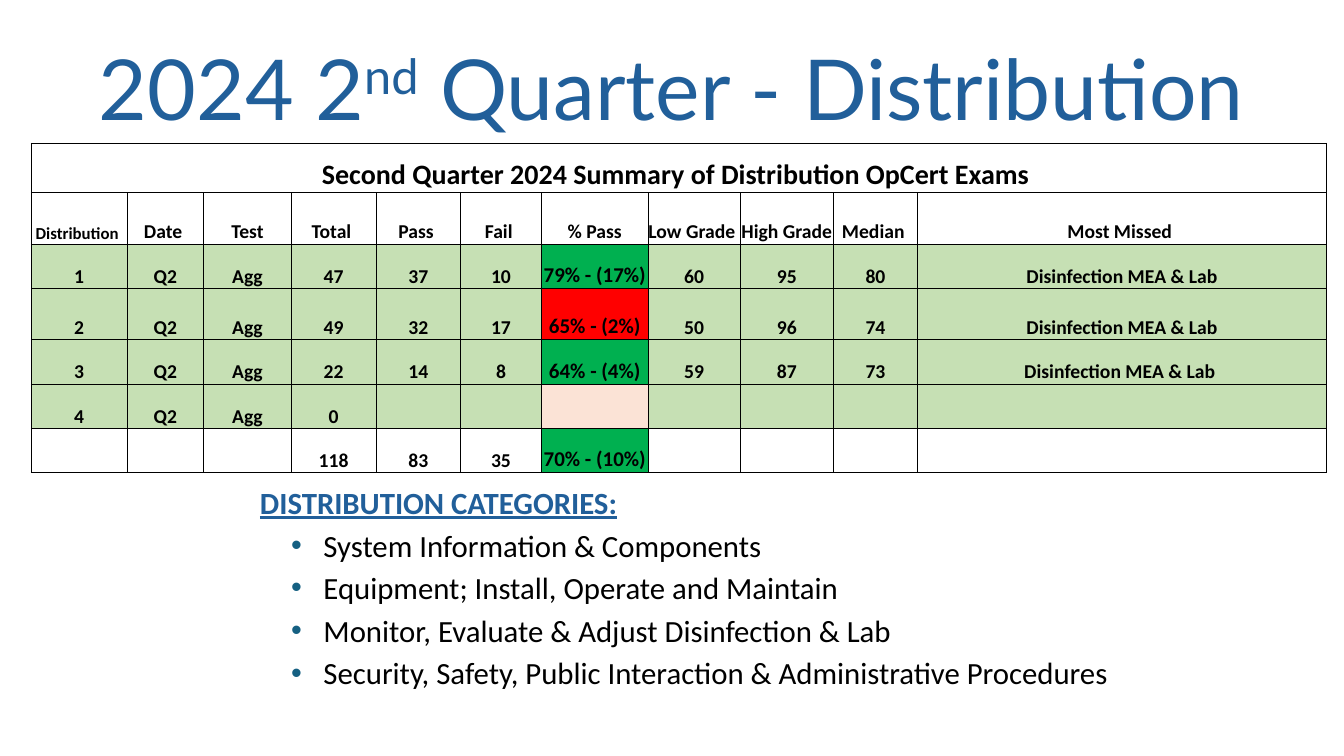
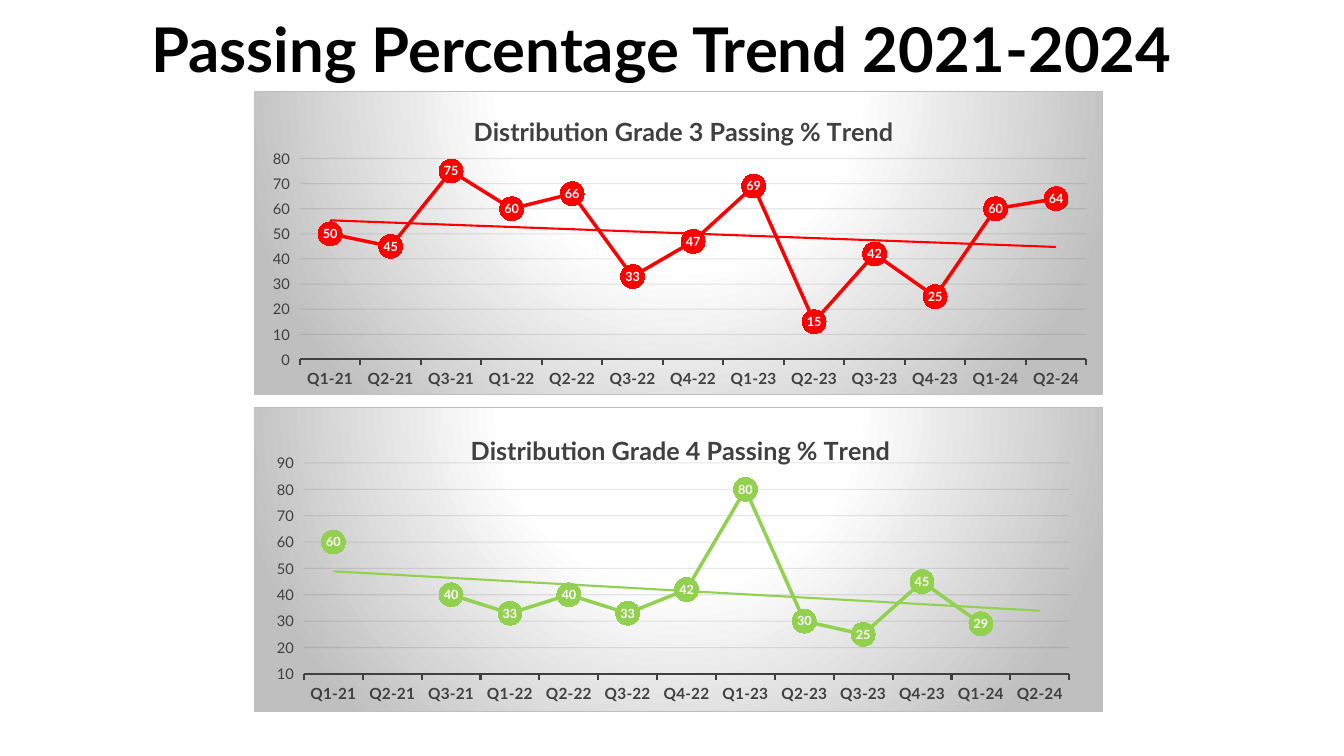
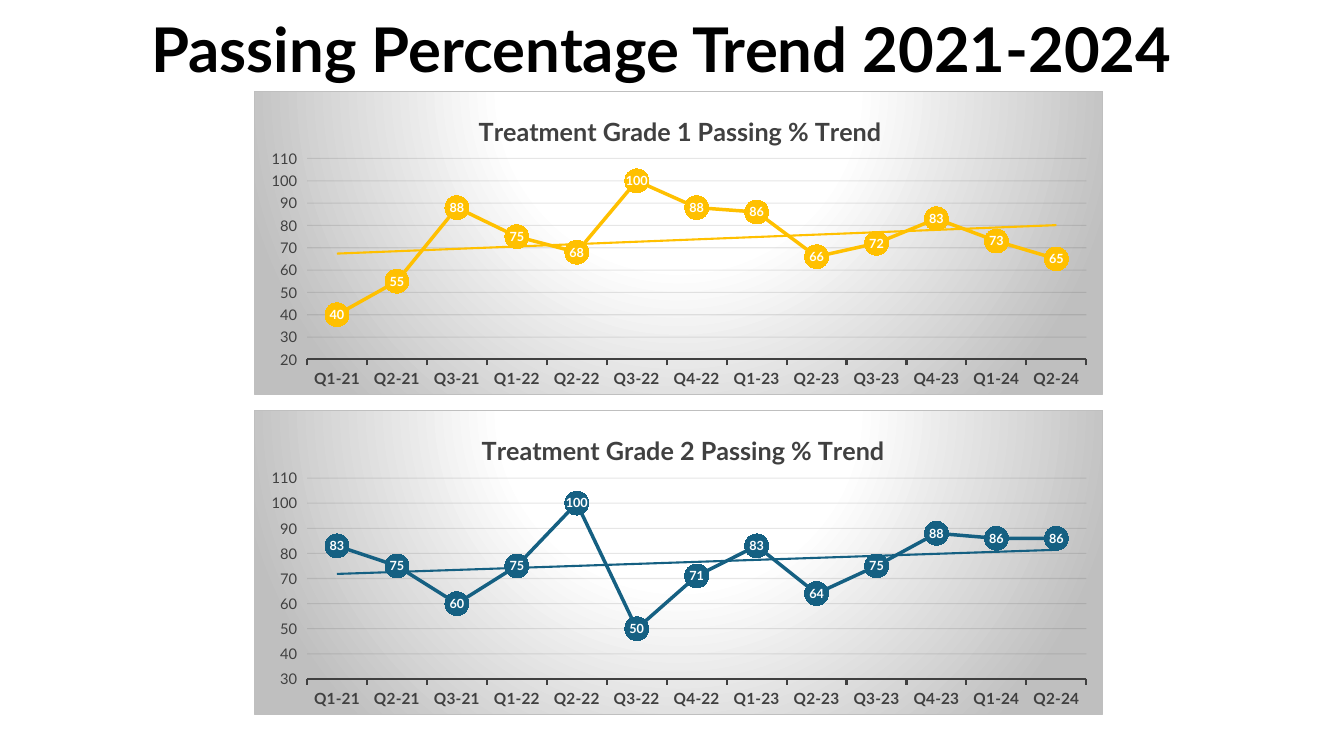
"""Build three slides on operator certification exam results and passing trends."""
from pptx import Presentation
from pptx.chart.data import CategoryChartData
from pptx.dml.color import RGBColor
from pptx.enum.chart import XL_CHART_TYPE, XL_LABEL_POSITION, XL_MARKER_STYLE, XL_TICK_MARK
from pptx.enum.text import MSO_ANCHOR, PP_ALIGN
from pptx.oxml import parse_xml
from pptx.oxml.ns import nsdecls, qn
from pptx.util import Pt

LINE_MARKERS = XL_CHART_TYPE.LINE_MARKERS
LABEL_CENTER = XL_LABEL_POSITION.CENTER
CIRCLE = XL_MARKER_STYLE.CIRCLE
TICK_OUT = XL_TICK_MARK.OUTSIDE
BOTTOM = MSO_ANCHOR.BOTTOM
CENTER = PP_ALIGN.CENTER

PX = 9144
HEAD_FONT, BODY_FONT = "Lato", "Calibri"
C = {
    "black": "000000", "white": "FFFFFF", "blue": "215F9A", "teal": "156082",
    "red": "FF0000", "lime": "92D050", "gold": "FFC000", "green": "00B050",
    "sage": "C6E0B4", "peach": "FBE3D6", "axis": "404040", "grid": "0D0D0D",
    "silver": "BFBFBF",
}
RGB = {name: RGBColor.from_string(value) for name, value in C.items()}
NS = nsdecls("a", "c")


def add_title(s, box, runs, size, color, bold):
    """Add a centred title; each run is a text and its baseline shift."""
    tf = s.shapes.add_textbox(*[v * PX for v in box]).text_frame
    tf.word_wrap = True
    tf.vertical_anchor = BOTTOM
    p = tf.paragraphs[0]
    p.alignment = CENTER
    p.line_spacing = 0.9
    for text, baseline in runs:
        r = p.add_run()
        r.text = text
        r.font.name, r.font.size, r.font.bold = HEAD_FONT, Pt(size), bold
        r.font.color.rgb = RGB[color]
        if baseline:
            r.font._element.set("baseline", str(baseline))


def place(parent, index, values, inner=False):
    """Give a chart part a manual layout in fractions of the chart."""
    for old in parent.findall(qn("c:layout")):
        parent.remove(old)
    target = '<c:layoutTarget val="inner"/>' if inner else ""
    modes = '<c:xMode val="edge"/><c:yMode val="edge"/>'
    sizes = "".join(f'<c:{k} val="{v:.4f}"/>' for k, v in zip("xywh", values))
    parent.insert(index, parse_xml(
        f"<c:layout {NS}><c:manualLayout>{target}{modes}{sizes}</c:manualLayout></c:layout>"))


prs = Presentation()
prs.slide_width, prs.slide_height = 1333 * PX, 750 * PX
blank = prs.slide_layouts[6]

s = prs.slides.add_slide(blank)
add_title(s, (41, 34, 1250, 108),
          [("2024 2", 0), ("nd", 30000), (" Quarter - Distribution", 0)], 60, "blue", False)

categories = [
    "DISTRIBUTION CATEGORIES:",
    "System Information & Components",
    "Equipment; Install, Operate and Maintain",
    "Monitor, Evaluate & Adjust Disinfection & Lab",
    "Security, Safety, Public Interaction & Administrative Procedures",
]
tf = s.shapes.add_textbox(248 * PX, 475 * PX, 979 * PX, 233 * PX).text_frame
tf.word_wrap = True
for i, text in enumerate(categories):
    heading = i == 0
    p = tf.paragraphs[0] if heading else tf.add_paragraph()
    if not heading:
        p.space_before = Pt(4)
        pPr = p._p.get_or_add_pPr()
        pPr.set("marL", str(63 * PX))
        pPr.set("indent", str(-32 * PX))
        pPr.append(parse_xml(f'<a:buClr {NS}><a:srgbClr val="{C["teal"]}"/></a:buClr>'))
        pPr.append(parse_xml(f'<a:buFont {NS} typeface="Arial"/>'))
        pPr.append(parse_xml(f'<a:buChar {NS} char="•"/>'))
    r = p.add_run()
    r.text = text
    r.font.name, r.font.size = BODY_FONT, Pt(22)
    r.font.bold = r.font.underline = heading
    r.font.color.rgb = RGB["blue" if heading else "black"]

col_widths = [95, 76, 87, 84, 84, 80, 106, 91, 93, 83, 406]
row_heights = [49, 51, 44, 51, 44, 44, 44]
RATE_COL = 6
rows = [
    ["Second Quarter 2024 Summary of Distribution OpCert Exams "] + [""] * 10,
    ["Distribution ", "Date ", "Test", "Total ", "Pass ", "Fail ", "% Pass",
     "Low Grade ", "High Grade ", "Median ", "Most Missed "],
    ["1", "Q2", "Agg", "47", "37", "10", "79% - (17%)", "60", "95", "80", "Disinfection MEA & Lab"],
    ["2", "Q2", "Agg", "49", "32", "17", "65% - (2%)", "50", "96", "74", "Disinfection MEA & Lab"],
    ["3", "Q2", "Agg", "22", "14", "8", "64% - (4%)", "59", "87", "73", "Disinfection MEA & Lab "],
    ["4", "Q2", "Agg", "0"] + [""] * 7,
    ["", "", "", "118", "83", "35", "70% - (10%)", "", "", "", ""],
]
row_fills = [None, None, "sage", "sage", "sage", "sage", None]
rate_fills = [None, None, "green", "red", "green", "peach", "green"]

table = s.shapes.add_table(len(rows), len(col_widths), 31 * PX, 142 * PX,
                           sum(col_widths) * PX, sum(row_heights) * PX).table
table.first_row = table.horz_banding = False
for col, width in zip(table.columns, col_widths):
    col.width = width * PX
for row, height in zip(table.rows, row_heights):
    row.height = height * PX
for i, texts in enumerate(rows):
    for j, text in enumerate(texts):
        cell = table.cell(i, j)
        cell.margin_left = cell.margin_right = cell.margin_top = cell.margin_bottom = 0
        cell.vertical_anchor = BOTTOM
        for side in "LRTB":
            cell._tc.get_or_add_tcPr().append(parse_xml(
                f'<a:ln{side} {NS} w="{Pt(0.5)}"><a:solidFill><a:srgbClr val="{C["black"]}"/>'
                f"</a:solidFill></a:ln{side}>"))
        fill = rate_fills[i] if j == RATE_COL else row_fills[i]
        if fill:
            cell.fill.solid()
            cell.fill.fore_color.rgb = RGB[fill]
        else:
            cell.fill.background()
        if not text:
            continue
        if i == 0:
            size = 20
        elif i == 1:
            size = 12 if j == 0 else 14
        else:
            size = 15 if j == RATE_COL else 14
        p = cell.text_frame.paragraphs[0]
        p.alignment = CENTER
        r = p.add_run()
        r.text = text
        r.font.name, r.font.size, r.font.bold = BODY_FONT, Pt(size), True
        r.font.color.rgb = RGB["black"]
table.cell(0, 0).merge(table.cell(0, len(col_widths) - 1))

quarters = ["Q1-21", "Q2-21", "Q3-21", "Q1-22", "Q2-22", "Q3-22", "Q4-22",
            "Q1-23", "Q2-23", "Q3-23", "Q4-23", "Q1-24", "Q2-24"]
CHART_W, CHART_H = 842, 302
trend_slides = [
    [
        ("Distribution Grade 3 Passing % Trend", 90, "red", (0, 80), (213, 17), (45, 67, 781, 200),
         [50, 45, 75, 60, 66, 33, 47, 69, 15, 42, 25, 60, 64]),
        ("Distribution Grade 4 Passing % Trend", 404, "lime", (10, 90), (210, 20), (49, 55, 760, 210),
         [60, None, 40, 33, 40, 33, 42, 80, 30, 25, 45, 29, None]),
    ],
    [
        ("Treatment Grade 1 Passing % Trend", 90, "gold", (20, 110), (218, 17), (52, 67, 774, 200),
         [40, 55, 88, 75, 68, 100, 88, 86, 66, 72, 83, 73, 65]),
        ("Treatment Grade 2 Passing % Trend", 407, "teal", (30, 110), (221, 17), (52, 67, 774, 200),
         [83, 75, 60, 75, 100, 50, 71, 83, 64, 75, 88, 86, 86]),
    ],
]

for trends in trend_slides:
    s = prs.slides.add_slide(blank)
    add_title(s, (70, -20, 1173, 110), [("Passing Percentage Trend 2021-2024", 0)], 44, "black", True)
    for title, top, color, (low, high), title_at, plot_box, values in trends:
        data = CategoryChartData()
        data.categories = quarters
        data.add_series("Series 1", values)
        chart = s.shapes.add_chart(LINE_MARKERS, 252 * PX, top * PX,
                                   CHART_W * PX, CHART_H * PX, data).chart
        chart.has_legend = False
        chart.font.name, chart.font.size = HEAD_FONT, Pt(10)
        chart.font.color.rgb = RGB["black"]

        chart.has_title = True
        r = chart.chart_title.text_frame.paragraphs[0].add_run()
        r.text = title
        r.font.name, r.font.size, r.font.bold = HEAD_FONT, Pt(18), True
        r.font.color.rgb = RGB["axis"]
        x, y = title_at
        place(chart.chart_title._element, 1, (x / CHART_W, y / CHART_H))

        x, y, w, h = plot_box
        plot_area = chart.element.find(".//" + qn("c:plotArea"))
        place(plot_area, 0, (x / CHART_W, y / CHART_H, w / CHART_W, h / CHART_H), inner=True)
        plot_area.append(parse_xml(f"<c:spPr {NS}><a:noFill/></c:spPr>"))
        chart.element.find(qn("c:chart")).addnext(parse_xml(
            f'<c:spPr {NS}><a:gradFill><a:gsLst>'
            f'<a:gs pos="0"><a:srgbClr val="{C["white"]}"/></a:gs>'
            f'<a:gs pos="39000"><a:srgbClr val="{C["white"]}"/></a:gs>'
            f'<a:gs pos="100000"><a:srgbClr val="{C["silver"]}"/></a:gs></a:gsLst>'
            '<a:path path="circle"><a:fillToRect l="50000" t="-80000" r="50000" b="180000"/></a:path>'
            f'</a:gradFill><a:ln w="{Pt(0.75)}"><a:solidFill><a:srgbClr val="{C["silver"]}"/>'
            '</a:solidFill></a:ln></c:spPr>'))

        cat_axis, val_axis = chart.category_axis, chart.value_axis
        for axis, size, bold in ((cat_axis, 11, True), (val_axis, 10.5, False)):
            font = axis.tick_labels.font
            font.name, font.size, font.bold = HEAD_FONT, Pt(size), bold
            font.color.rgb = RGB["axis"]
            axis.major_tick_mark = TICK_OUT
        cat_axis.format.line.width = Pt(1.5)
        cat_axis.format.line.color.rgb = RGB["axis"]
        val_axis.format.line.fill.background()
        val_axis.minimum_scale, val_axis.maximum_scale, val_axis.major_unit = low, high, 10
        grid = val_axis.major_gridlines.format.line
        grid.width = Pt(0.75)
        grid.color.rgb = RGB["grid"]
        val_axis.major_gridlines._xAx.find(
            qn("c:majorGridlines") + "//" + qn("a:srgbClr")).append(
            parse_xml(f'<a:alpha {NS} val="10000"/>'))

        plot = chart.plots[0]
        plot.vary_by_categories = False
        series = plot.series[0]
        series.smooth = False
        series.format.line.width = Pt(2.5)
        series.format.line.color.rgb = RGB[color]
        series.marker.style, series.marker.size = CIRCLE, 17
        series.marker.format.fill.solid()
        series.marker.format.fill.fore_color.rgb = RGB[color]
        series.marker.format.line.fill.background()
        labels = series.data_labels
        labels.show_value = True
        labels.position = LABEL_CENTER
        labels.font.name, labels.font.size, labels.font.bold = HEAD_FONT, Pt(9), True
        labels.font.color.rgb = RGB["white"]
        series._element.find(qn("c:cat")).addprevious(parse_xml(
            f'<c:trendline {NS}><c:spPr><a:ln w="{Pt(1.5)}"><a:solidFill>'
            f'<a:srgbClr val="{C[color]}"/></a:solidFill></a:ln></c:spPr>'
            '<c:trendlineType val="linear"/><c:dispRSqr val="0"/><c:dispEq val="0"/></c:trendline>'))

prs.save("out.pptx")
